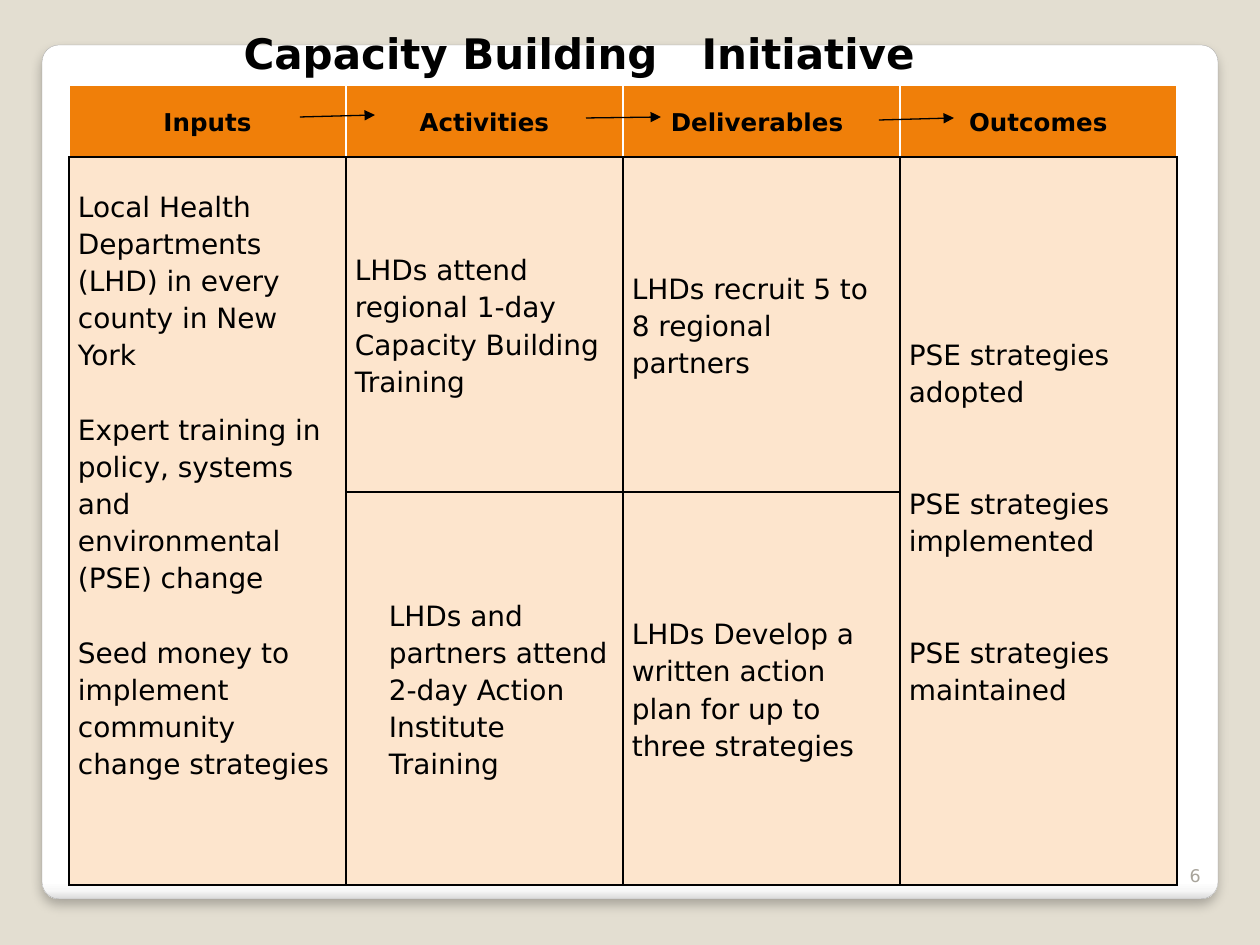
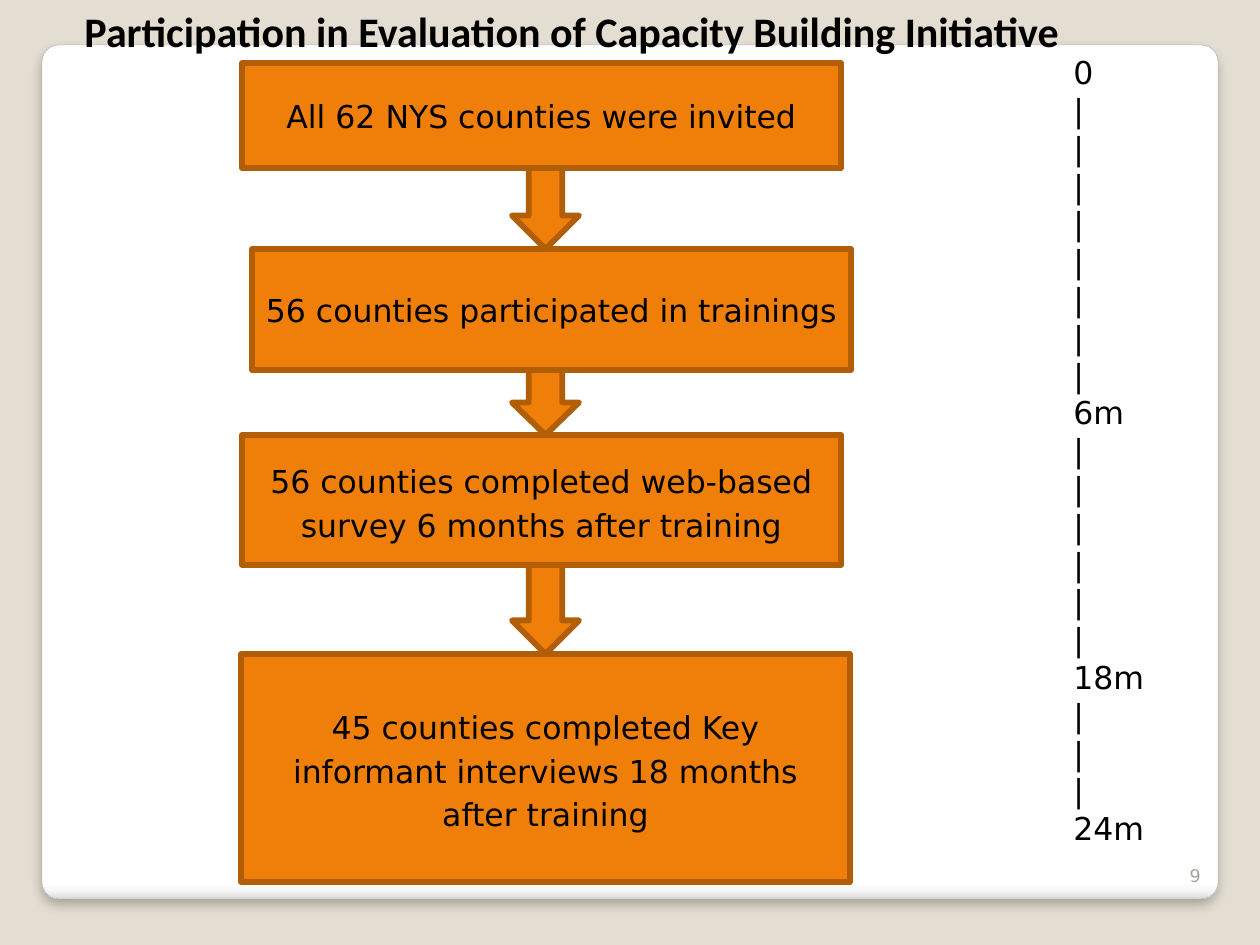
from lxml import etree
from pptx import Presentation
from pptx.dml.color import RGBColor
from pptx.enum.shapes import MSO_CONNECTOR, MSO_SHAPE
from pptx.enum.text import MSO_ANCHOR, MSO_AUTO_SIZE, PP_ALIGN
from pptx.oxml import parse_xml
from pptx.oxml.ns import nsdecls, qn
from pptx.util import Pt

PX = 914400 / 126
LEFT, CENTER, RIGHT = PP_ALIGN.LEFT, PP_ALIGN.CENTER, PP_ALIGN.RIGHT
TOP, MIDDLE, BOTTOM = MSO_ANCHOR.TOP, MSO_ANCHOR.MIDDLE, MSO_ANCHOR.BOTTOM
RECT, ROUND, DOWN = MSO_SHAPE.RECTANGLE, MSO_SHAPE.ROUNDED_RECTANGLE, MSO_SHAPE.DOWN_ARROW
STRAIGHT = MSO_CONNECTOR.STRAIGHT

SANS, TITLE_SANS = "DejaVu Sans", "Calibri"
BLACK, WHITE, GREY = "000000", "FFFFFF", "A8A49B"
BACKDROP, ORANGE, RUST, PEACH = "E3DED1", "F07F09", "B25E07", "FDE5CD"
PANEL_EDGE = "A4A4A4"
PANEL_STOPS = [(0, WHITE), (98, WHITE), (99, "F7F7F7"), (100, "DADADA")]

HEADERS = ["Inputs", "Activities", "Deliverables ", "Outcomes"]
INPUTS = [
    "Local Health Departments (LHD) in every county in New York",
    "Expert training in policy, systems and environmental (PSE) change",
    "Seed money to implement community change strategies",
]
ACTIVITIES = [
    "LHDs attend regional 1-day Capacity Building Training",
    "LHDs and partners attend 2-day Action Institute Training",
]
DELIVERABLES = [
    "LHDs recruit 5 to 8 regional partners",
    "LHDs Develop a written action plan for up to three strategies",
]
OUTCOMES = ["PSE strategies adopted", "PSE strategies implemented", "PSE strategies maintained"]
COL_W, ROW_H = 277, [72, 335, 393]
HEADER_ARROWS = [(300, 117, 375, 115), (586, 118, 661, 117), (879, 120, 954, 118)]

STEPS = [
    ("All 62 NYS counties were invited", (242, 63, 599, 105), 1),
    ("56 counties participated in trainings", (252, 249, 599, 121), 1),
    ("56 counties completed web-based survey 6 months after training", (242, 435, 599, 130), 1.15),
    ("45 counties completed Key informant interviews 18 months after training",
     (241, 654, 609, 228), 1.15),
]
ARROW_X, ARROW_W = 512, 67
TIMELINE = [("0", 8), ("6m", 6), ("18m", 3), ("24m", 0)]


def px(*values):
    return [round(v * PX) for v in values]


def rgb(value):
    return RGBColor.from_string(value)


def paint(fill, color):
    fill.solid()
    fill.fore_color.rgb = rgb(color)


def style(tf, size, color=BLACK, align=LEFT, bold=False, font=SANS, spacing=1, gap=0):
    for i, p in enumerate(tf.paragraphs):
        p.alignment = align
        p.line_spacing = spacing
        p.space_before = Pt(gap if i else 0)
        p.font.name, p.font.size, p.font.bold = font, Pt(size), bold
        p.font.color.rgb = rgb(color)


def add_text(s, text, box, size, anchor=TOP, **look):
    tf = s.shapes.add_textbox(*px(*box)).text_frame
    tf.word_wrap = True
    tf.vertical_anchor = anchor
    tf.text = text
    style(tf, size, **look)


def add_block(s, kind, box, color=ORANGE, edge=RUST, width=3.35):
    sp = s.shapes.add_shape(kind, *px(*box))
    sp.shadow.inherit = False
    paint(sp.fill, color)
    sp.line.color.rgb = rgb(edge)
    sp.line.width = Pt(width)
    return sp


def add_panel(s):
    sp = add_block(s, ROUND, (42, 45, 1176, 854), WHITE, PANEL_EDGE, 0.16)
    sp.adjustments[0] = 0.02
    stops = "".join(f'<a:gs pos="{pos * 1000}"><a:srgbClr val="{c}"/></a:gs>'
                    for pos, c in PANEL_STOPS)
    spPr = sp._element.spPr
    spPr.replace(spPr.find(qn("a:solidFill")), parse_xml(
        f'<a:gradFill {nsdecls("a")}><a:gsLst>{stops}</a:gsLst>'
        '<a:lin ang="5400000" scaled="0"/></a:gradFill>'))
    spPr.find(qn("a:effectLst")).append(parse_xml(
        f'<a:outerShdw {nsdecls("a")} blurRad="{Pt(6)}" dist="{Pt(4)}" dir="5400000">'
        f'<a:srgbClr val="{BLACK}"><a:alpha val="25000"/></a:srgbClr></a:outerShdw>'))
    s.shapes._spTree.insert(2, sp._element)


def add_slide(prs, number, title, box, align, font):
    s = prs.slides.add_slide(prs.slide_layouts[5])
    add_panel(s)
    sp = s.shapes.title
    sp.left, sp.top, sp.width, sp.height = px(*box)
    tf = sp.text_frame
    tf.auto_size = MSO_AUTO_SIZE.NONE
    tf.vertical_anchor = MIDDLE
    for part in title:
        tf.paragraphs[0].add_run().text = part
    style(tf, 24, align=align, bold=True, font=font)
    add_text(s, number, (1150, 842, 63, 50), 10, BOTTOM, color=GREY, align=RIGHT)
    return s


def add_borders(cell, colors):
    tcPr = cell._tc.get_or_add_tcPr()
    for i, (side, color) in enumerate(zip("LRTB", colors)):
        tcPr.insert(i, parse_xml(
            f'<a:ln{side} {nsdecls("a")} w="{Pt(1)}"><a:solidFill>'
            f'<a:srgbClr val="{color}"/></a:solidFill></a:ln{side}>'))


def fill_cell(cell, paragraphs, size, left=9, bottom=0, **look):
    cell.vertical_anchor = MIDDLE
    cell.margin_left, cell.margin_right, cell.margin_top, cell.margin_bottom = px(
        left, 9, 0, bottom)
    cell.text_frame.text = "\n".join(paragraphs)
    style(cell.text_frame, size, spacing=1.15, **look)


def add_logic_table(s):
    box = (69, 85, COL_W * len(HEADERS), sum(ROW_H))
    table = s.shapes.add_table(len(ROW_H), len(HEADERS), *px(*box)).table
    for col in table.columns:
        col.width = px(COL_W)[0]
    for row, height in zip(table.rows, ROW_H):
        row.height = px(height)[0]
    for r in range(len(ROW_H)):
        for c in range(len(HEADERS)):
            cell = table.cell(r, c)
            paint(cell.fill, PEACH if r else ORANGE)
            add_borders(cell, [BLACK] * 4 if r else [WHITE] * 3 + [BLACK])
    for c, header in enumerate(HEADERS):
        fill_cell(table.cell(0, c), [header], 14, align=CENTER, bold=True)
    for c in (0, 3):
        table.cell(1, c).merge(table.cell(2, c))
    fill_cell(table.cell(1, 0), INPUTS, 16, bottom=74, gap=21.3)
    fill_cell(table.cell(1, 3), OUTCOMES, 16, gap=42.6)
    for r, (activity, deliverable) in enumerate(zip(ACTIVITIES, DELIVERABLES), 1):
        fill_cell(table.cell(r, 1), [activity], 16, left=9 if r == 1 else 43)
        fill_cell(table.cell(r, 2), [deliverable], 16)


def add_arrow(s, ends):
    line = s.shapes.add_connector(STRAIGHT, *px(*ends))
    line.line.color.rgb = rgb(BLACK)
    line.line.width = Pt(0.75)
    etree.SubElement(line.line._get_or_add_ln(), qn("a:tailEnd"), type="triangle")
    etree.SubElement(line._element.spPr, qn("a:effectLst"))


def build_logic_model(prs):
    s = add_slide(prs, "6", ["Capacity Building", " ", "Initiative"],
                  (231, 21, 723, 63), LEFT, SANS)
    wide_space = s.shapes.title.text_frame.paragraphs[0].runs[1]
    wide_space.font._element.set("spc", "1670")
    add_logic_table(s)
    for ends in HEADER_ARROWS:
        add_arrow(s, ends)


def build_participation(prs):
    s = add_slide(prs, "9", ["Participation in Evaluation of Capacity Building Initiative"],
                  (0, 0, 1144, 62), CENTER, TITLE_SANS)
    marks = [m for label, ticks in TIMELINE for m in [label] + ["|"] * ticks]
    add_text(s, "\n".join(marks), (1061, 47, 116, 814), 18)
    bottom = None
    for text, box, spacing in STEPS:
        if bottom:
            add_block(s, DOWN, (ARROW_X, bottom, ARROW_W, box[1] - bottom))
        sp = add_block(s, RECT, box)
        tf = sp.text_frame
        tf.word_wrap = True
        tf.vertical_anchor = MIDDLE
        tf.text = text
        style(tf, 18, align=CENTER, spacing=spacing)
        bottom = box[1] + box[3]


def main():
    prs = Presentation()
    prs.slide_width, prs.slide_height = px(1260, 945)
    paint(prs.slide_master.background.fill, BACKDROP)
    build_logic_model(prs)
    build_participation(prs)
    prs.save("out.pptx")


if __name__ == "__main__":
    main()
